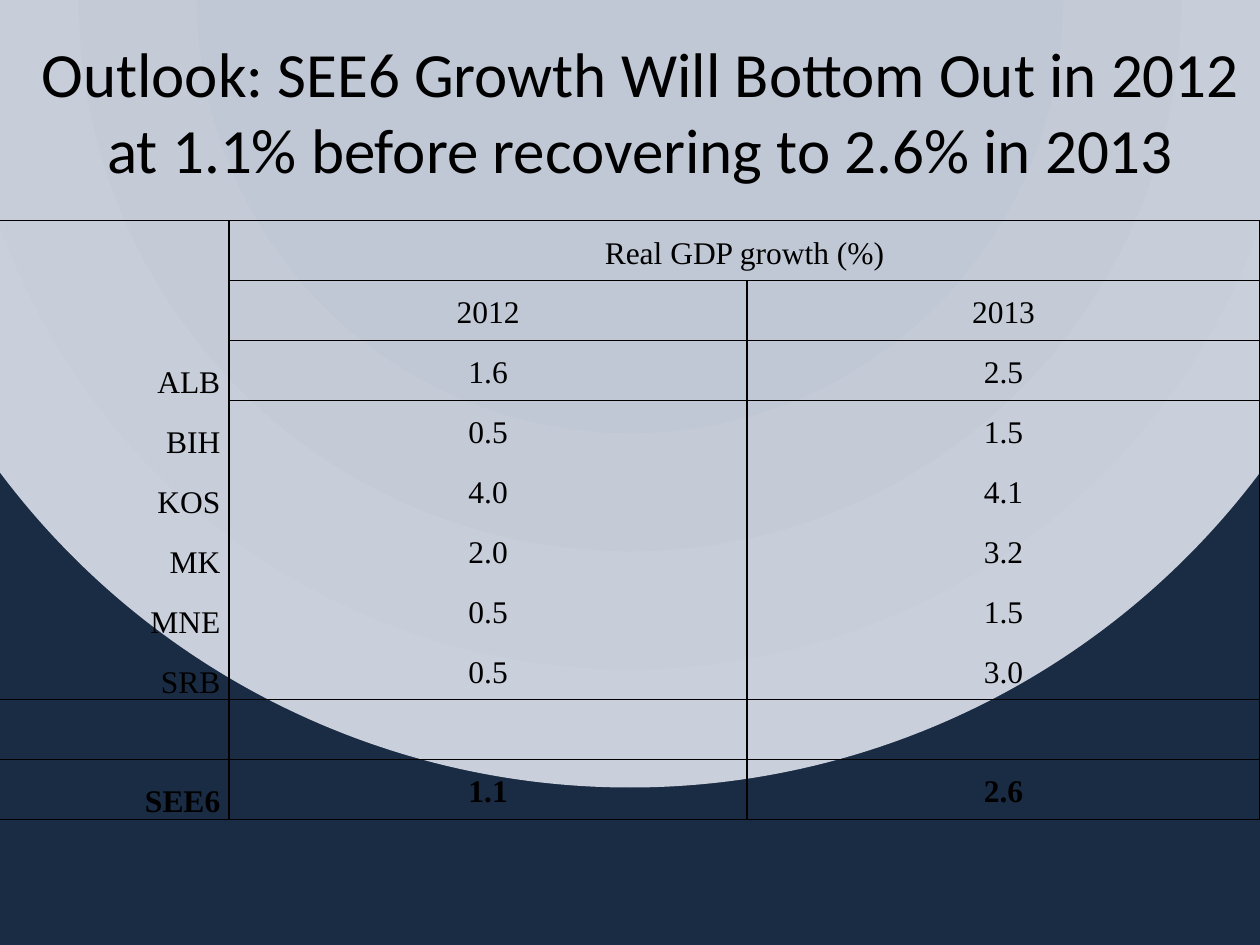
from pptx import Presentation
from pptx.dml.color import RGBColor
from pptx.enum.text import MSO_ANCHOR, MSO_AUTO_SIZE, PP_ALIGN
from pptx.oxml import parse_xml
from pptx.util import Cm, Pt

MIDDLE, BOTTOM = MSO_ANCHOR.MIDDLE, MSO_ANCHOR.BOTTOM
CENTER, RIGHT = PP_ALIGN.CENTER, PP_ALIGN.RIGHT
NO_AUTOFIT = MSO_AUTO_SIZE.NONE

DRAWING = 'xmlns:a="http://schemas.openxmlformats.org/drawingml/2006/main"'
PLAIN_TABLE = "{2D5ABB26-0587-4C30-8999-92F81FD0307C}"
TITLE_ONLY = 5
COLORS = {"ink": "000000", "center": "C1C8D5", "rim": "CAD0DB", "navy": "1A2B44"}

GROWTH = [
    ("", "Real GDP growth (%)", ""),
    ("", "2012", "2013"),
    ("ALB", "1.6", "2.5"),
    ("BIH", "0.5", "1.5"),
    ("KOS", "4.0", "4.1"),
    ("MK", "2.0", "3.2"),
    ("MNE", "0.5", "1.5"),
    ("SRB", "0.5", "3.0"),
    ("", "", ""),
    ("SEE6", "1.1", "2.6"),
]
TOTAL_ROW = len(GROWTH) - 1
HEADER_ROWS = (0, 1)
RULED_ROWS = (TOTAL_ROW - 2, TOTAL_ROW)


class SlideBuilder:
    def __init__(self, page):
        self.page = page
        self.title_font, self.title_size = "Calibri", Pt(36)
        self.table_font, self.table_size = "Times New Roman", Pt(18)

    def background(self):
        fill = self.page.background.fill
        fill.gradient()
        stops = "".join(
            f'<a:gs pos="{position * 1000}"><a:srgbClr val="{COLORS[name]}"/></a:gs>'
            for position, name in ((40, "center"), (100, "rim"), (100, "navy")))
        gradient = parse_xml(
            f'<a:gradFill {DRAWING} rotWithShape="1"><a:gsLst>{stops}</a:gsLst>'
            '<a:path path="circle">'
            '<a:fillToRect l="50000" t="-80000" r="50000" b="180000"/>'
            '</a:path></a:gradFill>')
        properties = self.page.background._cSld.bg.bgPr
        properties.replace(properties[0], gradient)

    def format_text(self, frame, font, size, align, bold=False):
        for para in frame.paragraphs:
            para.alignment = align
            para.font.size = size
            for span in para.runs:
                span.font.name, span.font.size, span.font.bold = font, size, bold
                span.font.color.rgb = RGBColor.from_string(COLORS["ink"])

    def title(self, text, left, top, width, height):
        box = self.page.shapes.title
        box.left, box.top, box.width, box.height = left, top, width, height
        frame = box.text_frame
        frame.text = text
        frame.word_wrap = True
        frame.auto_size = NO_AUTOFIT
        frame.vertical_anchor = MIDDLE
        self.format_text(frame, self.title_font, self.title_size, CENTER)

    def borders(self, cell, sides):
        """Draw the given sides, which must come in the order L, R, T, B."""
        properties = cell._tc.get_or_add_tcPr()
        for side in sides:
            properties.append(parse_xml(
                f'<a:ln{side} {DRAWING} w="12700"><a:solidFill>'
                f'<a:srgbClr val="{COLORS["ink"]}"/></a:solidFill></a:ln{side}>'))

    def table(self, rows, left, top, widths, height):
        frame = self.page.shapes.add_table(
            len(rows), len(widths), left, top, sum(widths), height)
        frame._element.graphic.graphicData.tbl.tblPr[0].text = PLAIN_TABLE
        table = frame.table
        table.first_row = table.horz_banding = False
        for column, width in zip(table.columns, widths):
            column.width = width
        table.cell(0, 1).merge(table.cell(0, 2))
        for r, row in enumerate(rows):
            for c, text in enumerate(row):
                self.cell(table.cell(r, c), text, r, c)

    def cell(self, cell, text, r, c):
        is_label = c == 0
        cell.text = text
        cell.vertical_anchor = BOTTOM if is_label else MIDDLE
        cell.margin_left = cell.margin_right = Cm(0.18)
        cell.margin_top = cell.margin_bottom = 0
        cell.text_frame.paragraphs[0].line_spacing = 1.15
        self.format_text(cell.text_frame, self.table_font, self.table_size,
                         RIGHT if is_label else CENTER, r == TOTAL_ROW)

        def ruled_below(row):
            return row in RULED_ROWS or (row in HEADER_ROWS and not is_label)

        drawn = {"L": c == 1, "R": c != 1 or r == 0,
                 "T": r == 0 or ruled_below(r - 1), "B": ruled_below(r)}
        self.borders(cell, [side for side, visible in drawn.items() if visible])
        cell.fill.background()


def main():
    deck = Presentation()
    deck.slide_width, deck.slide_height = Cm(25.4), Cm(19.05)
    builder = SlideBuilder(deck.slides.add_slide(deck.slide_layouts[TITLE_ONLY]))
    builder.background()
    builder.title("Outlook: SEE6 Growth Will Bottom Out in 2012 "
                  "at 1.1% before recovering to 2.6% in 2013",
                  Cm(0.43), 0, Cm(24.97), Cm(4.45))
    builder.table(GROWTH, 0, Cm(4.45), (Cm(4.62), Cm(10.44), Cm(10.34)), Cm(12.07))
    deck.save("out.pptx")


if __name__ == "__main__":
    main()
